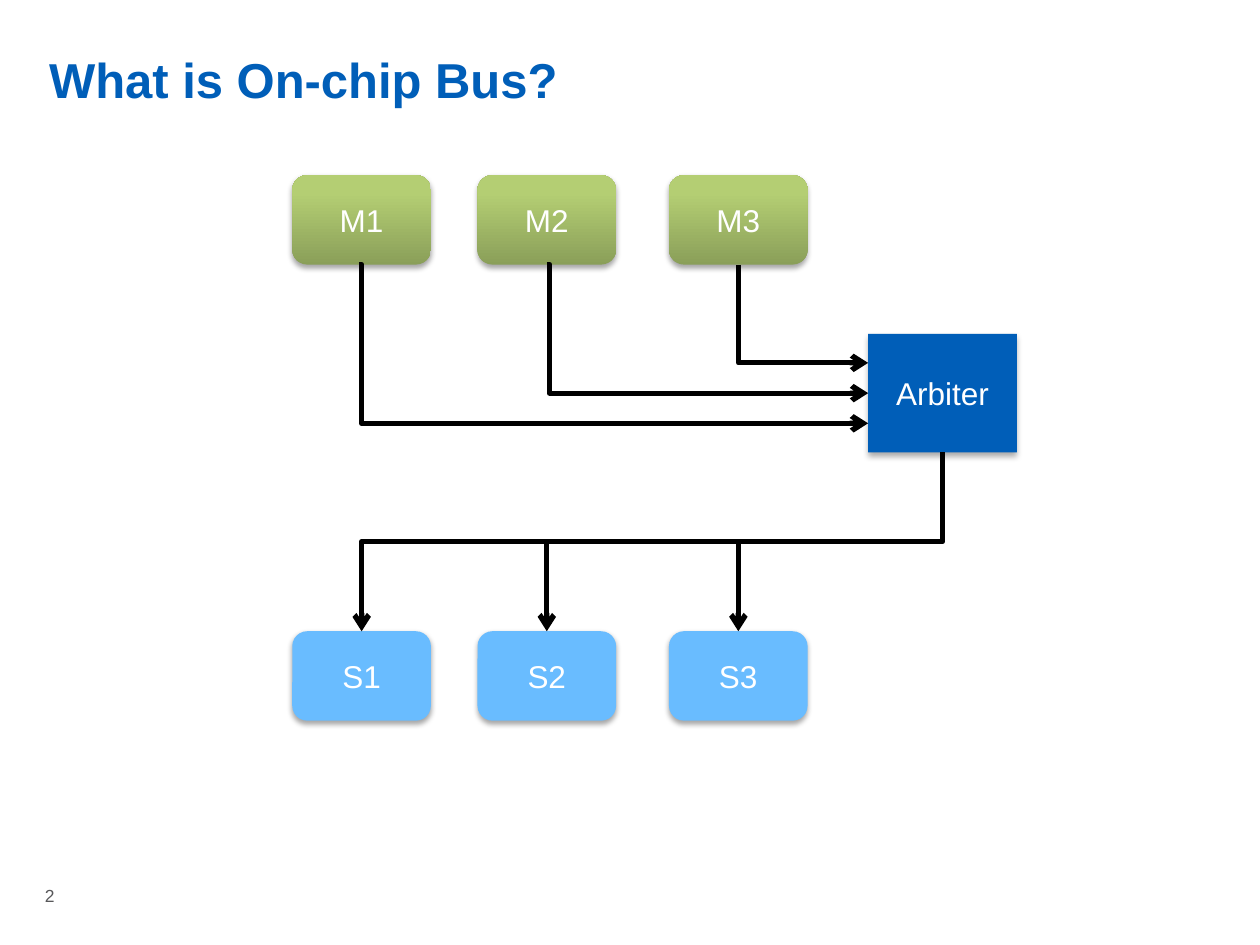
import copy

import lxml.etree
import pptx
import pptx.dml.color
import pptx.enum.shapes
import pptx.enum.text
import pptx.oxml.ns
import pptx.util

Inches = pptx.util.Inches
qn = pptx.oxml.ns.qn
SHAPES = pptx.enum.shapes.MSO_SHAPE
CONNECTORS = pptx.enum.shapes.MSO_CONNECTOR
CENTER = pptx.enum.text.PP_ALIGN.CENTER
MIDDLE = pptx.enum.text.MSO_ANCHOR.MIDDLE
TOP = pptx.enum.text.MSO_ANCHOR.TOP

COLORS = {
    "blue": "005EB8",
    "sky": "69BCFF",
    "green_dark": "8A9F59",
    "green": "B4CE73",
    "green_light": "B5D172",
    "gray": "58585A",
    "white": "FFFFFF",
    "black": "000000",
}
MASTER_STOPS = ((0, "green_dark"), (0.8, "green"), (1, "green_light"))


class BusDiagram:
    """Draw the elements of the bus diagram in one style on one slide."""

    font = "Arial"
    line_width = 3

    def __init__(self, slide):
        self.slide = slide

    def color(self, name):
        return pptx.dml.color.RGBColor.from_string(COLORS[name])

    def fill_text(self, shape, text, size, color, bold=False, align=None, anchor=MIDDLE):
        frame = shape.text_frame
        frame.word_wrap = True
        frame.vertical_anchor = anchor
        paragraph = frame.paragraphs[0]
        paragraph.alignment = align
        run = paragraph.add_run()
        run.text = text
        run.font.name = self.font
        run.font.size = pptx.util.Pt(size)
        run.font.bold = bold
        run.font.color.rgb = self.color(color)

    def text(self, box, text, size, color, inset=0.1, **style):
        shape = self.slide.shapes.add_textbox(*map(Inches, box))
        frame = shape.text_frame
        frame.margin_left = frame.margin_right = Inches(inset)
        frame.margin_top = frame.margin_bottom = Inches(inset / 2)
        self.fill_text(shape, text, size, color, **style)

    def block(self, box, text, fill, kind=SHAPES.ROUNDED_RECTANGLE, shadow=(35, 3.1, 1.8)):
        shape = self.slide.shapes.add_shape(kind, *map(Inches, box))
        if isinstance(fill, str):
            shape.fill.solid()
            shape.fill.fore_color.rgb = self.color(fill)
        else:
            self.gradient(shape, fill)
        shape.line.fill.background()
        self.shadow(shape, *shadow)
        self.fill_text(shape, text, 18, "white", align=CENTER)

    def gradient(self, shape, stops):
        shape.fill.gradient()
        shape.fill.gradient_angle = 90
        stop_list = shape._element.spPr.find(".//" + qn("a:gsLst"))
        stop_list.append(copy.deepcopy(stop_list[0]))
        for stop, (position, name) in zip(shape.fill.gradient_stops, stops):
            stop.position = position
            stop.color.rgb = self.color(name)

    def shadow(self, shape, opacity, blur, distance):
        shape.shadow.inherit = False
        effects = shape._element.spPr.find(qn("a:effectLst"))
        outer = lxml.etree.SubElement(
            effects, qn("a:outerShdw"), blurRad=str(pptx.util.Pt(blur)),
            dist=str(pptx.util.Pt(distance)), dir="5400000", rotWithShape="0")
        color = lxml.etree.SubElement(outer, qn("a:srgbClr"), val=COLORS["black"])
        lxml.etree.SubElement(color, qn("a:alpha"), val=str(opacity * 1000))

    def arrow(self, start, end, kind=CONNECTORS.STRAIGHT):
        connector = self.slide.shapes.add_connector(kind, *map(Inches, (*start, *end)))
        connector.line.color.rgb = self.color("black")
        connector.line.width = pptx.util.Pt(self.line_width)
        outline = connector._element.spPr.find(qn("a:ln"))
        lxml.etree.SubElement(outline, qn("a:tailEnd"), type="arrow")
        lxml.etree.SubElement(connector._element.spPr, qn("a:effectLst"))
        return connector

    def elbow(self, start, end, bend):
        connector = self.arrow(start, end, CONNECTORS.ELBOW)
        guides = connector._element.spPr.find(".//" + qn("a:avLst"))
        lxml.etree.SubElement(
            guides, qn("a:gd"), name="adj1", fmla=f"val {round(bend * 100000)}")

    def turned_elbow(self, start, end, rotation, preset="bentConnector3", flip=False):
        center_x, center_y = (start[0] + end[0]) / 2, (start[1] + end[1]) / 2
        half_width, half_height = abs(end[1] - start[1]) / 2, abs(end[0] - start[0]) / 2
        connector = self.arrow(
            (center_x - half_width, center_y - half_height),
            (center_x + half_width, center_y + half_height), CONNECTORS.ELBOW)
        properties = connector._element.spPr
        properties.find(qn("a:prstGeom")).set("prst", preset)
        transform = properties.find(qn("a:xfrm"))
        transform.set("rot", str(rotation * 60000))
        if flip:
            transform.set("flipH", "1")


def main():
    presentation = pptx.Presentation()
    presentation.slide_width = Inches(10)
    presentation.slide_height = Inches(7.5)
    diagram = BusDiagram(presentation.slides.add_slide(presentation.slide_layouts[6]))

    diagram.text((0.39, 0.39, 9.21, 0.98), "What is On-chip Bus?", 28, "blue",
                 inset=0, bold=True, anchor=TOP)
    diagram.text((0, 6.71, 0.79, 0.79), "2", 10, "gray", align=CENTER)

    width, height = 1.1, 0.71
    master_top, slave_top, bus_y = 1.39, 5.01, 4.3
    columns = (2.32, 3.79, 5.31)
    for number, left in enumerate(columns, 1):
        diagram.block((left, master_top, width, height), f"M{number}", MASTER_STOPS)
        diagram.block((left, slave_top, width, height), f"S{number}", "sky")

    arbiter_left, arbiter_top, arbiter_width, arbiter_height = arbiter = (6.89, 2.65, 1.18, 0.94)
    diagram.block(arbiter, "Arbiter", "blue", SHAPES.RECTANGLE, (32, 3.5, 2.2))

    master_bottom = master_top + height
    first, second, third = (left + width / 2 for left in columns)
    diagram.turned_elbow((third, master_bottom), (arbiter_left, 2.88), 270,
                         preset="bentConnector2", flip=True)
    diagram.elbow((second, master_bottom), (arbiter_left, 3.12), 0.009)
    diagram.elbow((first - 0.02, master_bottom), (arbiter_left, 3.36), 0.005)

    arbiter_exit = (arbiter_left + arbiter_width / 2, arbiter_top + arbiter_height)
    diagram.turned_elbow(arbiter_exit, (first, slave_top), 90)
    for center in (second, third):
        diagram.arrow((center, bus_y), (center, slave_top))

    presentation.save("out.pptx")


if __name__ == "__main__":
    main()
